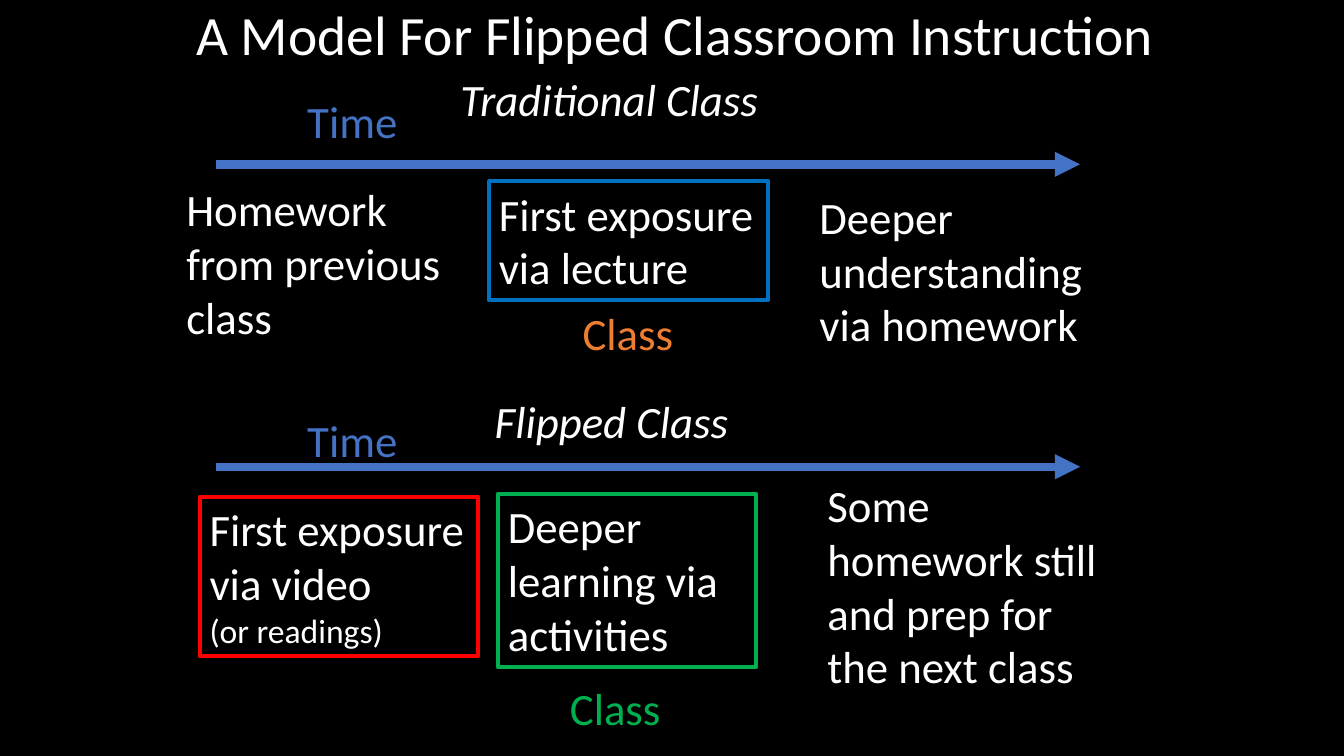
from collections import namedtuple

from lxml.etree import SubElement
from pptx import Presentation
from pptx.dml.color import RGBColor
from pptx.enum.shapes import MSO_CONNECTOR as Connector, MSO_SHAPE as Preset
from pptx.enum.text import MSO_ANCHOR as Anchor, MSO_AUTO_SIZE as AutoSize, PP_ALIGN as Align
from pptx.oxml.ns import qn
from pptx.util import Pt

BLACK = RGBColor(0x00, 0x00, 0x00)
WHITE = RGBColor(0xFF, 0xFF, 0xFF)
TIME_BLUE = RGBColor(0x44, 0x72, 0xC4)
LECTURE_BLUE = RGBColor(0x00, 0x70, 0xC0)
ORANGE = RGBColor(0xED, 0x7D, 0x31)
GREEN = RGBColor(0x00, 0xB0, 0x50)
RED = RGBColor(0xFF, 0x00, 0x00)
FONT = "Calibri"
TEXT_SIZE = 32
NOTE_SIZE = 24
LINE_HEIGHT = 46

Box = namedtuple("Box", "left top width height")
Stage = namedtuple("Stage", "box text border", defaults=[None])
Label = namedtuple("Label", "box text color")

TRADITIONAL_STAGES = [
    Stage(Box(0, 79, 197, 124), "Homework from previous class"),
    Stage(Box(223.2, 82, 199.4, 85), "First exposure via lecture", LECTURE_BLUE),
    Stage(Box(452.2, 84.3, 211.7, 124), "Deeper\nunderstanding via homework"),
]
FLIPPED_STAGES = [
    Stage(Box(16.6, 77, 198.7, 113.8), "First exposure via video\v(or readings)", RED),
    Stage(Box(229.7, 74.8, 184.3, 123.8), "Deeper learning via activities", GREEN),
    Stage(Box(457.9, 59.7, 215.3, 162.7), "Some homework still and prep for the next class"),
]


def inside(outer, inner):
    """Move a box given relative to another onto the page."""
    return Box(outer.left + inner.left, outer.top + inner.top, inner.width, inner.height)


def place(box):
    """Turn a box into four lengths."""
    return [Pt(length) for length in box]


def style_span(span, color, size=TEXT_SIZE, italic=False):
    """Set the font of one run."""
    span.font.name = FONT
    span.font.size = Pt(size)
    span.font.color.rgb = color
    span.font.italic = italic


def write(shape, text, color=WHITE, align=Align.LEFT, italic=False, wrap=True):
    """Write text, with any run after a line break as a smaller note."""
    frame = shape.text_frame
    frame.text = text
    frame.word_wrap = wrap
    frame.vertical_anchor = Anchor.TOP
    for para in frame.paragraphs:
        para.alignment = align
        for index, span in enumerate(para.runs):
            style_span(span, color, NOTE_SIZE if index else TEXT_SIZE, italic)


def add_title(page, box, text):
    """Fill and place the title placeholder."""
    title = page.shapes.title
    title.left, title.top, title.width, title.height = place(box)
    frame = title.text_frame
    frame.text = text
    frame.auto_size = AutoSize.NONE
    frame.vertical_anchor = Anchor.MIDDLE
    para = frame.paragraphs[0]
    para.alignment = Align.CENTER
    para.line_spacing = 0.9
    style_span(para.runs[0], WHITE, 39.6)


def add_arrow(page, box):
    """Draw the time arrow along the top edge of a box."""
    left, top, width, _ = place(box)
    arrow = page.shapes.add_connector(Connector.STRAIGHT, left, top, left + width, top)
    arrow.line.color.rgb = TIME_BLUE
    arrow.line.width = Pt(6)
    SubElement(arrow.line._get_or_add_ln(), qn("a:tailEnd"), type="triangle")
    SubElement(arrow._element.spPr, qn("a:effectLst"))


def add_stage(page, box, text, border):
    """Add one stage of learning, framed if it has a border colour."""
    if border is None:
        stage = page.shapes.add_textbox(*place(box))
    else:
        stage = page.shapes.add_shape(Preset.RECTANGLE, *place(box))
        stage.shadow.inherit = False
        stage.fill.background()
        stage.line.color.rgb = border
        stage.line.width = Pt(3)
    write(stage, text)


def add_timeline(page, box, heading, time_top, arrow_top, stages, class_label):
    """Add a heading, a time arrow, its stages and the class label."""
    add_arrow(page, inside(box, Box(28.5, arrow_top, 617, 0)))
    for stage in stages:
        add_stage(page, inside(box, stage.box), stage.text, stage.border)
    time_box = inside(box, Box(86.4, time_top, 95.8, LINE_HEIGHT))
    write(page.shapes.add_textbox(*place(time_box)), "Time", TIME_BLUE)
    heading_shape = page.shapes.add_textbox(*place(inside(box, heading.box)))
    write(heading_shape, heading.text, heading.color, italic=True, wrap=False)
    class_shape = page.shapes.add_textbox(*place(inside(box, class_label.box)))
    write(class_shape, class_label.text, class_label.color, Align.CENTER)


def build():
    """Build the deck and save it."""
    deck = Presentation()
    deck.slide_width, deck.slide_height = Pt(960), Pt(540)
    page = deck.slides.add_slide(deck.slide_layouts[5])
    page.background.fill.solid()
    page.background.fill.fore_color.rgb = BLACK
    add_title(page, Box(28.8, 5, 906.5, 44), "A Model For Flipped Classroom Instruction")
    add_timeline(
        page, Box(126, 47.5, 674, 214),
        Label(Box(195.8, 0, 229.7, LINE_HEIGHT), "Traditional Class", WHITE),
        15.9, 69.9, TRADITIONAL_STAGES,
        Label(Box(223.2, 167, 198.7, LINE_HEIGHT), "Class", ORANGE),
    )
    add_timeline(
        page, Box(126, 278, 674, 251),
        Label(Box(220.3, 0, 184.3, LINE_HEIGHT), "Flipped Class", WHITE),
        12.9, 55.4, FLIPPED_STAGES,
        Label(Box(244, 204.4, 139, LINE_HEIGHT), "Class", GREEN),
    )
    deck.save("out.pptx")


if __name__ == "__main__":
    build()
